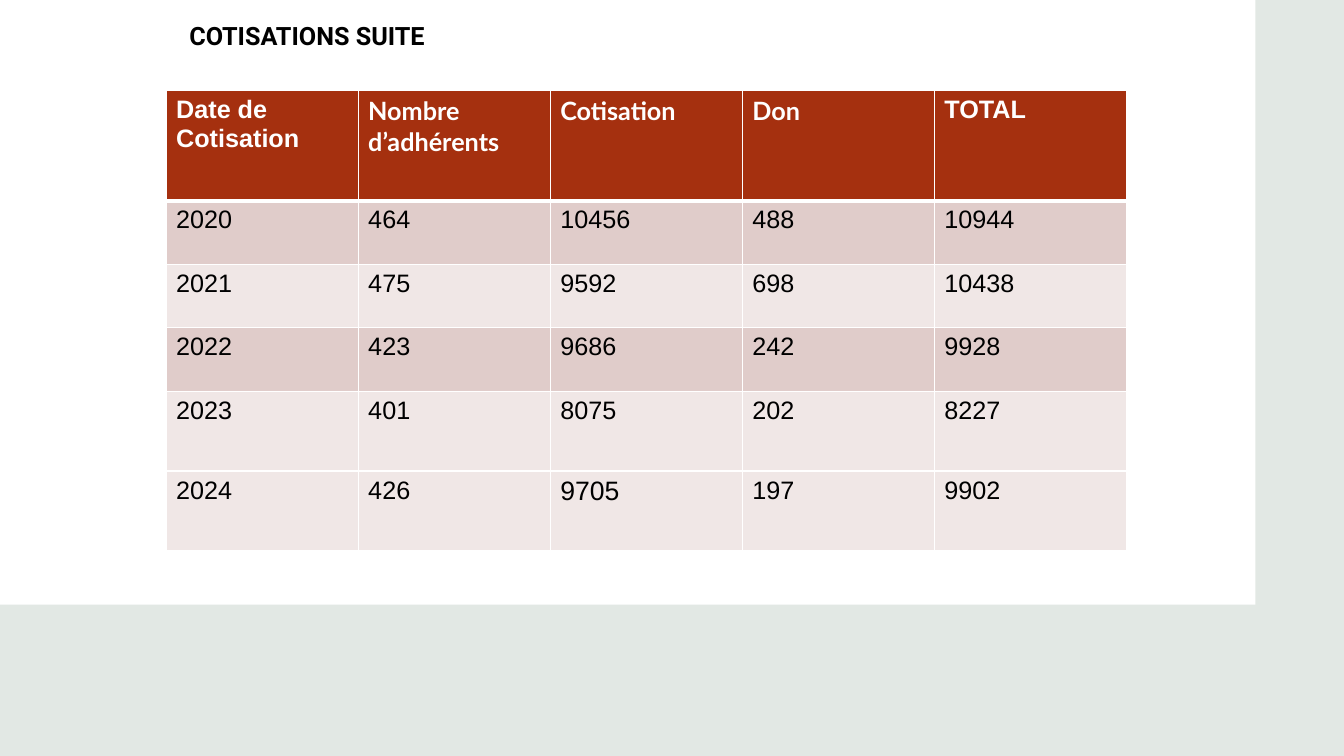
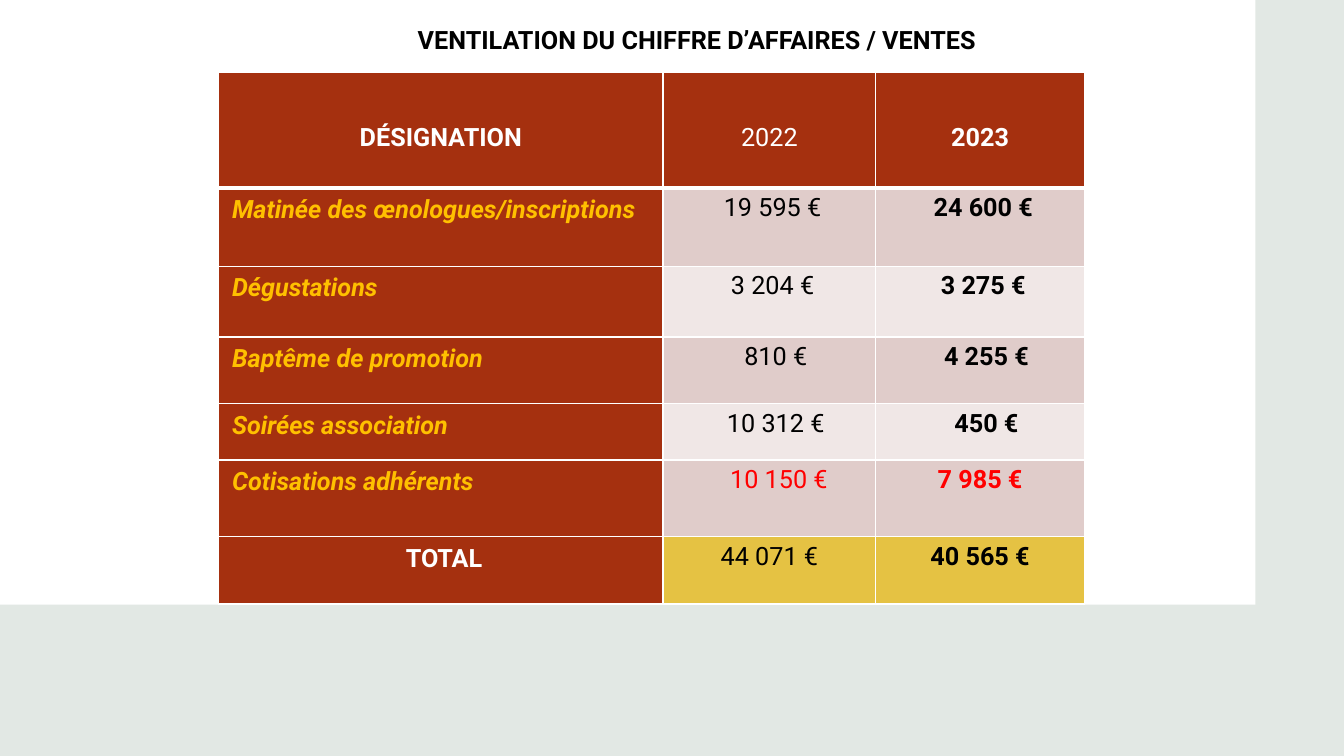
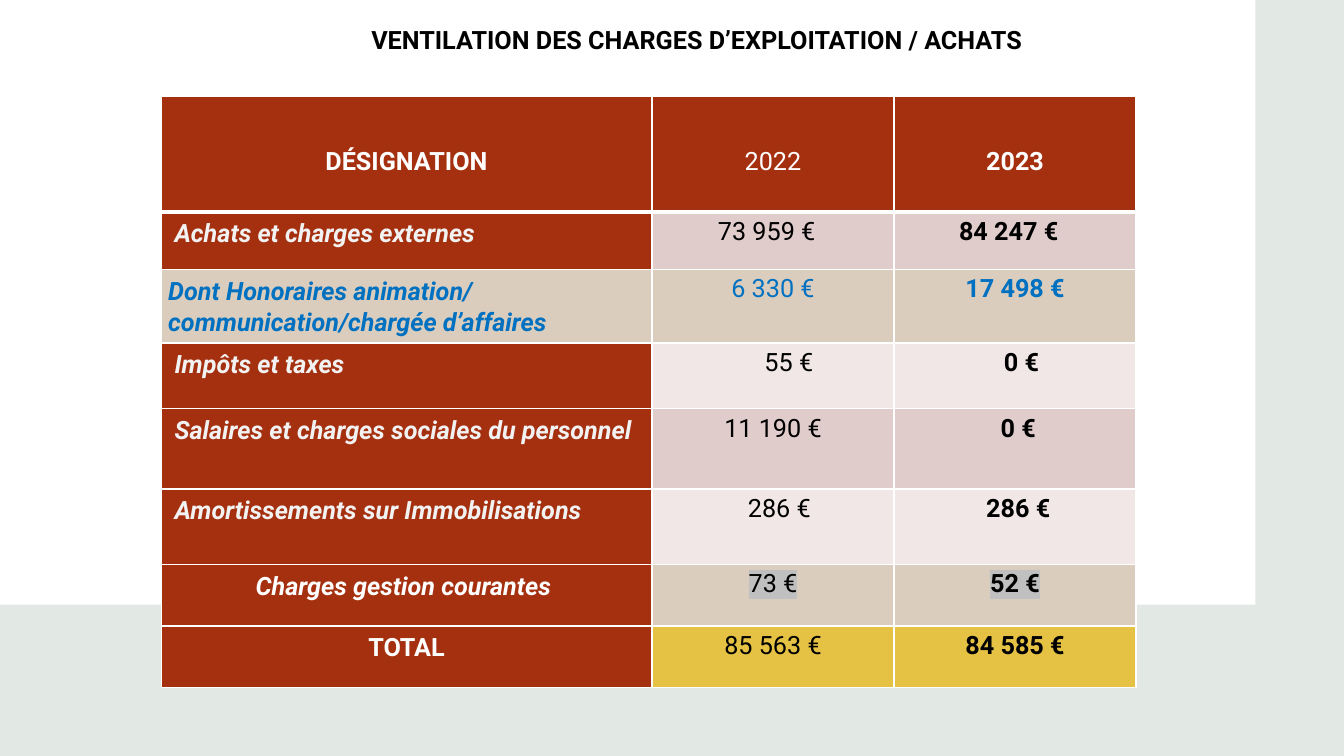
"""Build three slides of tables on membership fees, sales and operating costs."""
from lxml.etree import SubElement
from pptx import Presentation
from pptx.dml.color import RGBColor
from pptx.enum.shapes import MSO_SHAPE as Shape
from pptx.enum.text import MSO_ANCHOR as Anchor, MSO_AUTO_SIZE as AutoSize, PP_ALIGN as Align
from pptx.oxml.ns import qn
from pptx.util import Cm, Pt

WHITE, BLACK, SAGE = "FFFFFF", "000000", "E2E8E4"
RUST, ROSE, PALE = "A5300F", "E0CCCA", "F0E7E6"
SAND, GOLD, AMBER = "DACDBD", "E5C243", "FFC000"
RED, BLUE, MIST, GREY = "FF0000", "0070C0", "F2F2F2", "C0C0C0"
SPACE = 0.16


def rgb(color):
    return RGBColor.from_string(color)


def write_cell(cell, text, fill, color, font="Roboto", bold=False, italic=False, size=18,
               align=Align.CENTER, spacing=1.0, margin=0.25, shift=0, top=0.13, edges=(0.96, 0.96)):
    cell.margin_left = Cm(margin + SPACE * max(shift, 0))
    cell.margin_right = Cm(margin + SPACE * max(-shift, 0))
    cell.margin_top, cell.margin_bottom = Cm(top), Cm(0.13)
    properties = cell._tc.get_or_add_tcPr()
    for side, width in zip(("lnL", "lnR", "lnT", "lnB"), (0.96, 0.96, *edges)):
        border = SubElement(properties, qn(f"a:{side}"), w=str(int(Pt(width))))
        SubElement(SubElement(border, qn("a:solidFill")), qn("a:srgbClr"), val=WHITE)
    cell.fill.solid()
    cell.fill.fore_color.rgb = rgb(fill)
    paragraph = cell.text_frame.paragraphs[0]
    paragraph.alignment, paragraph.line_spacing = align, spacing
    run = paragraph.add_run()
    run.text = text
    run.font.name, run.font.size = font, Pt(size)
    run.font.bold, run.font.italic = bold, italic
    run.font.color.rgb = rgb(color)
    return run


presentation = Presentation()
presentation.slide_width, presentation.slide_height = Cm(33.87), Cm(19.05)

pages = [
    ("COTISATIONS SUITE", (4.52, 0.23, 22.6, 1.17), Align.LEFT, 0.25, 1.2,
     (4.19, 2.29), [4.84] * 5, [2.77, 1.6, 1.6, 1.6, 2.01, 2.01]),
    ("VENTILATION DU CHIFFRE D’AFFAIRES / VENTES", (0, 0.36, 33.87, 1.07), Align.CENTER, 1.5, 1.15,
     (5.51, 1.83), [11.2, 5.36, 5.26], [2.9, 1.98, 1.78, 1.68, 1.42, 1.93, 1.7]),
    ("VENTILATION DES CHARGES D’EXPLOITATION / ACHATS", (0, 0.36, 33.87, 1.07), Align.CENTER, 1.5, 1.15,
     (4.06, 2.44), [12.37, 6.1, 6.1], [2.9, 1.45, 1.85, 1.65, 2.03, 1.9, 1.55, 1.55]),
]

tables = []
for heading, place, align, indent, spacing, corner, widths, heights in pages:
    slide = presentation.slides.add_slide(presentation.slide_layouts[5])
    for width, height, color in ((33.87, 19.05, SAGE), (31.64, 15.24, WHITE)):
        panel = slide.shapes.add_shape(Shape.RECTANGLE, 0, 0, Cm(width), Cm(height))
        panel.shadow.inherit = False
        panel.fill.solid()
        panel.fill.fore_color.rgb = rgb(color)
        panel.line.fill.background()

    title = slide.shapes.title
    slide.shapes._spTree.append(title._element)
    title.left, title.top, title.width, title.height = map(Cm, place)
    frame = title.text_frame
    frame.word_wrap, frame.auto_size, frame.vertical_anchor = True, AutoSize.NONE, Anchor.TOP
    frame.margin_left, frame.margin_right = Cm(indent), Cm(0.25)
    frame.margin_top = frame.margin_bottom = Cm(0.13)
    paragraph = frame.paragraphs[0]
    paragraph.alignment, paragraph.line_spacing = align, spacing
    run = paragraph.add_run()
    run.text = heading
    run.font.name, run.font.size, run.font.bold = "Roboto", Pt(18), True
    run.font.color.rgb = rgb(BLACK)

    left, top = corner
    table = slide.shapes.add_table(len(heights), len(widths), Cm(left), Cm(top),
                                   Cm(sum(widths)), Cm(sum(heights))).table
    for column, width in zip(table.columns, widths):
        column.width = Cm(width)
    for row, height in zip(table.rows, heights):
        row.height = Cm(height)
    tables.append(table)

fees, *breakdowns = tables

fee_headers = [("Date de Cotisation", "Arial"), ("Nombre d’adhérents", "Lato"),
               ("Cotisation", "Lato"), ("Don", "Lato"), ("TOTAL", "Arial")]
for column, (header, font) in enumerate(fee_headers):
    write_cell(fees.cell(0, column), header, RUST, WHITE, font, bold=True,
               align=Align.LEFT, edges=(0.96, 3))

fee_rows = [
    (ROSE, "2020", "464", "10456", "488", "10944"),
    (PALE, "2021", "475", "9592", "698", "10438"),
    (ROSE, "2022", "423", "9686", "242", "9928"),
    (PALE, "2023", "401", "8075", "202", "8227"),
    (PALE, "2024", "426", "9705", "197", "9902"),
]
for index, (fill, *figures) in enumerate(fee_rows, 1):
    for column, figure in enumerate(figures):
        write_cell(fees.cell(index, column), figure, fill, BLACK, "Arial",
                   size=19 if figure == "9705" else 18, align=Align.LEFT,
                   edges=(3 if index == 1 else 0.96, 0.96))

LEFT, CENTER = Align.LEFT, Align.CENTER
sales_rows = [
    ("Matinée des œnologues/inscriptions", 1, LEFT, RUST, AMBER, ROSE, BLACK, ("19 595 €", 1), ("24 600 €", 1)),
    ("Dégustations", 1, LEFT, RUST, AMBER, PALE, BLACK, ("3 204 €", 1), ("3 275 €", 1)),
    ("Baptême de promotion", 1, LEFT, RUST, AMBER, ROSE, BLACK, ("810 €", 2), ("4 255 €", 2)),
    ("Soirées association", 1, LEFT, RUST, AMBER, PALE, BLACK, ("10 312 €", 2), ("450 €", 2)),
    ("Cotisations adhérents", 1, LEFT, RUST, AMBER, ROSE, RED, ("10 150 €", 3), ("7 985 €", 0)),
    ("TOTAL", 1, CENTER, RUST, WHITE, GOLD, BLACK, ("44 071 €", 0), ("40 565 €", 0)),
]
cost_rows = [
    ("Achats et charges externes", 1, LEFT, RUST, MIST, ROSE, BLACK, ("73 959 €", -2), ("84 247 €", -2)),
    ("Dont Honoraires animation/ communication/chargée d’affaires", 0, LEFT, SAND, BLUE, SAND, BLUE,
     ("6 330 €", 0), ("17 498 €", 0)),
    ("Impôts et taxes", 1, LEFT, RUST, MIST, PALE, BLACK, ("55 €", 5), ("0 €", 2)),
    ("Salaires et charges sociales du personnel", 1, LEFT, RUST, MIST, ROSE, BLACK, ("11 190 €", 0), ("0 €", 1)),
    ("Amortissements sur Immobilisations", 1, LEFT, RUST, MIST, PALE, BLACK, ("286 €", 2), ("286 €", 1)),
    ("Charges gestion courantes", -1, CENTER, RUST, WHITE, SAND, BLACK, ("73 €", 0), ("52 €", 0)),
    ("TOTAL", 0, CENTER, RUST, WHITE, GOLD, BLACK, ("85 563 €", 0), ("84 585 €", 0)),
]

for table, rows in zip(breakdowns, (sales_rows, cost_rows)):
    for column, header in enumerate(("DÉSIGNATION", "2022", "2023")):
        write_cell(table.cell(0, column), header, RUST, WHITE, bold=column != 1,
                   spacing=1.07, top=1.21, edges=(0.96, 3))
    for index, (label, shift, align, label_fill, label_color, fill, color, *amounts) in enumerate(rows, 1):
        edges = (3 if index == 1 else 0.96, 0.96)
        write_cell(table.cell(index, 0), label, label_fill, label_color, bold=True,
                   italic=label != "TOTAL", align=align, spacing=1.07, margin=0.18,
                   shift=shift, edges=edges)
        for column, (amount, nudge) in enumerate(amounts, 1):
            run = write_cell(table.cell(index, column), amount, fill, color,
                             bold=column == 2, shift=nudge, edges=edges)
            if label == "Charges gestion courantes":
                text_properties = run._r.get_or_add_rPr()
                highlight = SubElement(text_properties, qn("a:highlight"))
                SubElement(highlight, qn("a:srgbClr"), val=GREY)
                text_properties.find(qn("a:solidFill")).addnext(highlight)

presentation.save("out.pptx")
